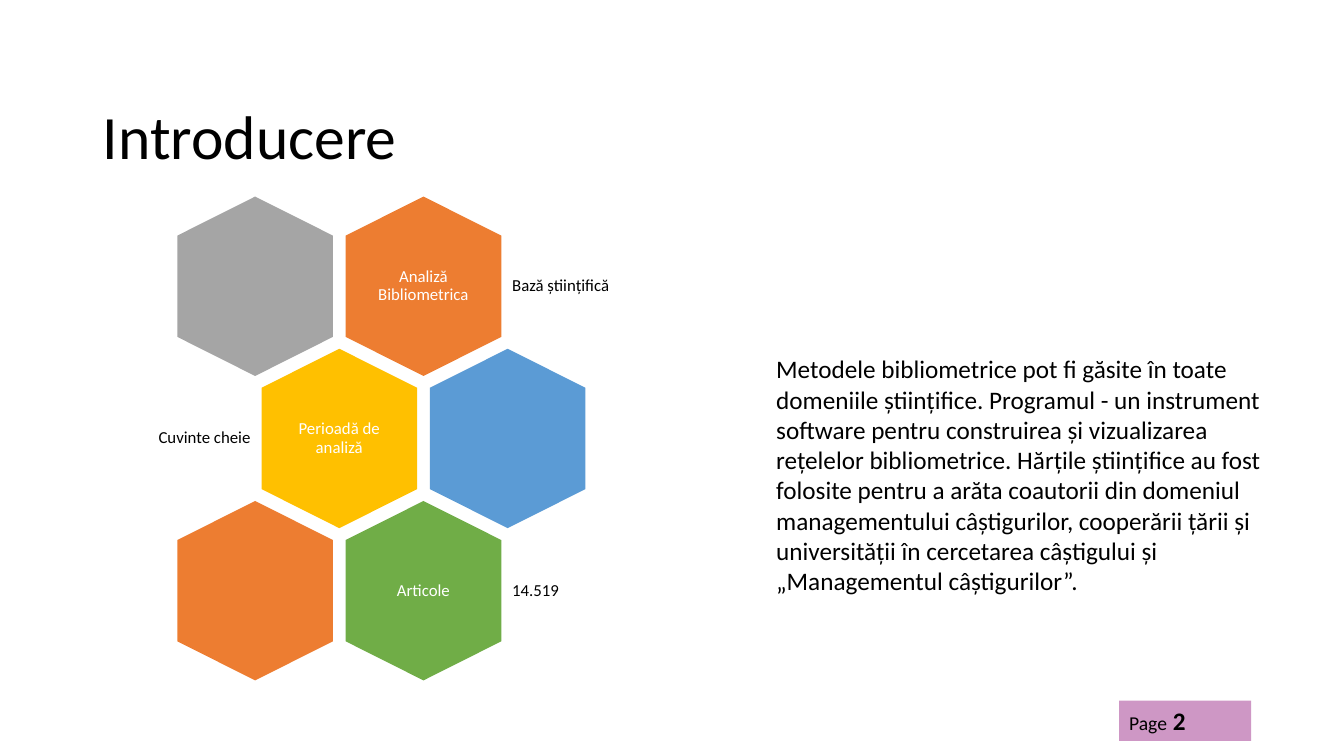
from lxml import etree
from pptx import Presentation
from pptx.dml.color import RGBColor
from pptx.enum.shapes import MSO_SHAPE as SHAPE
from pptx.enum.text import MSO_ANCHOR as ANCHOR, PP_ALIGN as ALIGN
from pptx.oxml.ns import qn
from pptx.util import Inches, Pt

FONT = "Calibri"
COLORS = {
    "text": "000000", "light": "FFFFFF", "page": "9F318D",
    "orange": "ED7D31", "gray": "A5A5A5", "yellow": "FFC000",
    "blue": "5B9BD5", "green": "70AD47",
}

# Honeycomb grid, in inches: centre of the first cell and the pitch
FIRST_X, FIRST_Y = 2.53, 2.84
PITCH_X, PITCH_Y = 1.67, 1.51
HEX_LENGTH, HEX_WIDTH = 1.78, 1.55
CAPTION_W, CAPTION_H = 1.07, 1.22
LABEL_W, LABEL_H, LABEL_GAP = 1.95, 1.07, 0.83

# row, column, colour, caption
CELLS = [
    (0, 0, "gray", None),
    (0, 1, "orange", "Analiză Bibliometrica"),
    (1, 0, "yellow", "Perioadă de analiză"),
    (1, 1, "blue", None),
    (2, 0, "orange", None),
    (2, 1, "green", "Articole"),
]
# row, column, side of the cell, label
LABELS = [
    (0, 1, 1, "Bază științifică"),
    (1, 0, -1, "Cuvinte cheie"),
    (2, 1, 1, "14.519"),
]
BODY = (
    "Metodele bibliometrice pot fi găsite în toate domeniile științifice. "
    "Programul - un instrument software pentru construirea și vizualizarea "
    "rețelelor bibliometrice. Hărțile științifice au fost folosite pentru a "
    "arăta coautorii din domeniul managementului câștigurilor, cooperării "
    "țării și universității în cercetarea câștigului și "
    "„Managementul câștigurilor”."
)


def rgb(name):
    return RGBColor.from_string(COLORS[name])


def centred(cx, cy, w, h):
    """Return left, top, width and height of a box centred on a point."""
    return [Inches(v) for v in (cx - w / 2, cy - h / 2, w, h)]


def cell_centre(row, col):
    """Odd rows are shifted right by half a cell."""
    return FIRST_X + (col + row % 2 / 2) * PITCH_X, FIRST_Y + row * PITCH_Y


def format_run(r, size, color="text", bold=False):
    r.font.name, r.font.size, r.font.bold = FONT, Pt(size), bold
    r.font.color.rgb = rgb(color)


def set_text(sp, text, size, color="text", align=ALIGN.LEFT,
             anchor=ANCHOR.TOP, spacing=None):
    tf = sp.text_frame
    tf.word_wrap = True
    tf.vertical_anchor = anchor
    tf.text = text
    p = tf.paragraphs[0]
    p.alignment = align
    p.line_spacing = spacing
    format_run(p.runs[0], size, color)


def add_filled(shapes, kind, box, color):
    sp = shapes.add_shape(kind, *box)
    sp.shadow.inherit = False
    sp.fill.solid()
    sp.fill.fore_color.rgb = rgb(color)
    sp.line.fill.background()
    return sp


def add_small_text(shapes, box, text, color, align):
    sp = shapes.add_textbox(*box)
    set_text(sp, text, 12, color, align, ANCHOR.MIDDLE, 0.9)
    tf = sp.text_frame
    tf.margin_left = tf.margin_right = Inches(0.05)


def add_cell(shapes, row, col, color, caption):
    centre = cell_centre(row, col)
    sp = add_filled(shapes, SHAPE.HEXAGON,
                    centred(*centre, HEX_LENGTH, HEX_WIDTH), color)
    sp.adjustments[0], sp.adjustments[1] = 0.25, 1.15
    sp.rotation = 90
    if caption:
        add_small_text(shapes, centred(*centre, CAPTION_W, CAPTION_H),
                       caption, "light", ALIGN.CENTER)


def add_label(shapes, row, col, side, text):
    """Put a label right (1) or left (-1) of a cell."""
    cx, cy = cell_centre(row, col)
    box = centred(cx + side * (LABEL_GAP + LABEL_W / 2), cy, LABEL_W, LABEL_H)
    add_small_text(shapes, box, text, "text",
                   ALIGN.LEFT if side > 0 else ALIGN.RIGHT)


def add_page_tag(shapes, box, number):
    sp = add_filled(shapes, SHAPE.RECTANGLE, box, "page")
    color = sp.fill._xPr.find(qn("a:solidFill"))[0]
    etree.SubElement(color, qn("a:alpha"), val="50000")
    set_text(sp, "Page", 14)
    r = sp.text_frame.paragraphs[0].add_run()
    r.text = f" {number}"
    format_run(r, 18, bold=True)


def main():
    prs = Presentation()
    prs.slide_width, prs.slide_height = Inches(13.33), Inches(7.5)
    s = prs.slides.add_slide(prs.slide_layouts[5])

    title = s.shapes.title
    title.left, title.top = Inches(0.92), Inches(0.91)
    title.width, title.height = Inches(11.5), Inches(0.94)
    set_text(title, "Introducere", 44, anchor=ANCHOR.MIDDLE, spacing=0.9)

    add_page_tag(s.shapes, [Inches(v) for v in (11.1, 6.95, 1.31, 0.4)], 2)

    honeycomb = s.shapes.add_group_shape().shapes
    for cell in CELLS:
        add_cell(honeycomb, *cell)
    for label in LABELS:
        add_label(honeycomb, *label)

    body = s.shapes.add_textbox(*[Inches(v) for v in (7.6, 3.46, 5.32, 2.52)])
    set_text(body, BODY, 18)

    prs.save("out.pptx")


if __name__ == "__main__":
    main()
